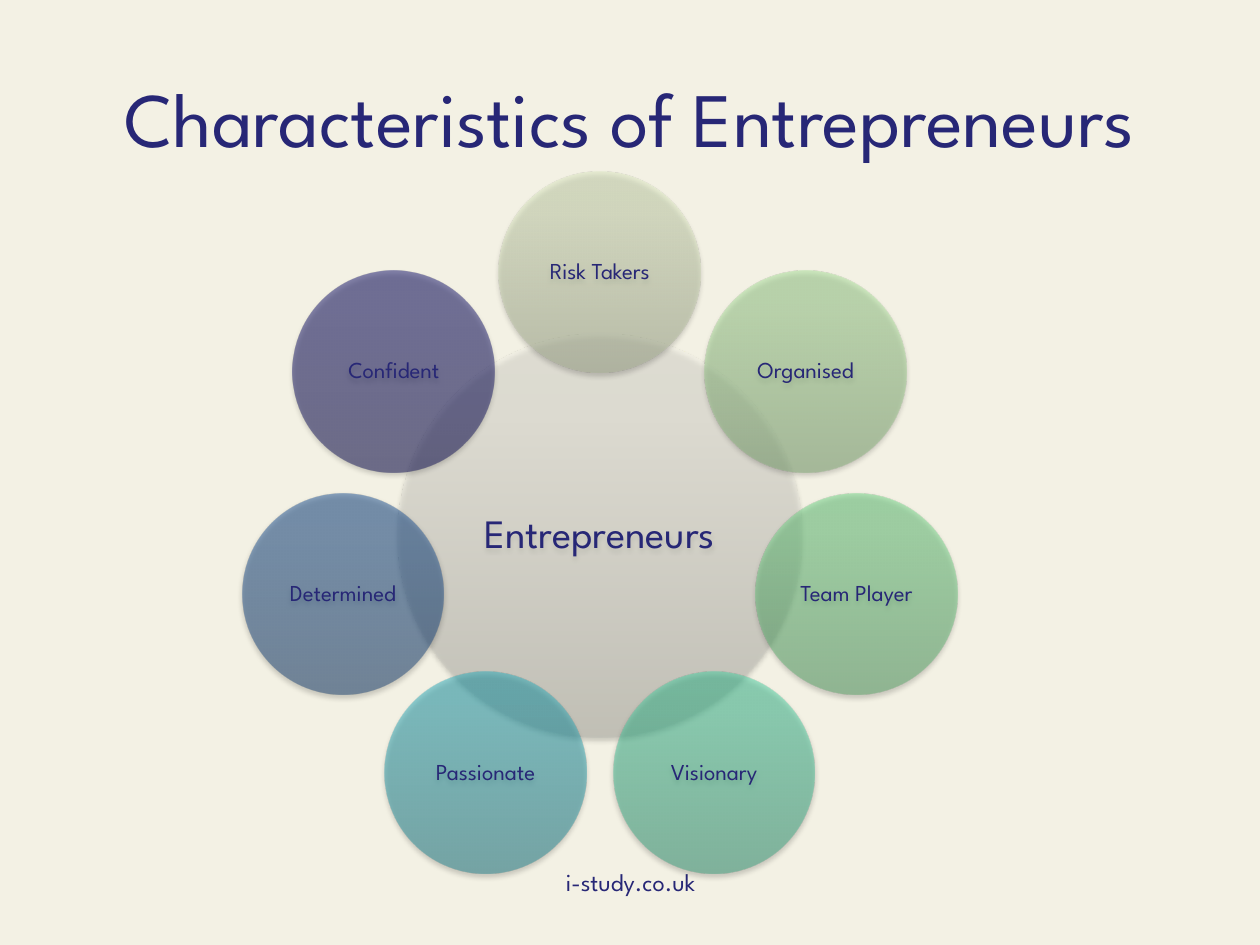
from math import cos, sin, tau

from lxml.etree import SubElement
from pptx import Presentation
from pptx.dml.color import RGBColor as RGB
from pptx.enum.shapes import MSO_SHAPE as Shape
from pptx.enum.text import MSO_ANCHOR as Anchor, PP_ALIGN as Align
from pptx.oxml import parse_xml
from pptx.oxml.ns import nsdecls, qn
from pptx.util import Pt

CREAM = RGB(0xF3, 0xF1, 0xE4)
NAVY = RGB(0x27, 0x27, 0x76)
BLACK = RGB(0x00, 0x00, 0x00)
# Gradient stops at 0, 80 and 100 percent, from bottom to top
GREY = RGB(0xBA, 0xB9, 0xB1), RGB(0xF2, 0xF0, 0xE6), RGB(0xF3, 0xF2, 0xE7)
SAGE = RGB(0xA8, 0xB1, 0x94), RGB(0xDA, 0xE6, 0xC0), RGB(0xDB, 0xE8, 0xC1)
LIME = RGB(0x82, 0xAA, 0x76), RGB(0xA8, 0xDC, 0x99), RGB(0xA8, 0xDF, 0x99)
GREEN = RGB(0x57, 0xA3, 0x68), RGB(0x71, 0xD3, 0x87), RGB(0x70, 0xD6, 0x87)
JADE = RGB(0x37, 0x9D, 0x7B), RGB(0x48, 0xCB, 0xA0), RGB(0x46, 0xCF, 0xA1)
TEAL = RGB(0x21, 0x81, 0x8D), RGB(0x2B, 0xA8, 0xB8), RGB(0x28, 0xAB, 0xBB)
BLUE = RGB(0x18, 0x3F, 0x70), RGB(0x1F, 0x52, 0x92), RGB(0x1D, 0x52, 0x95)
PLUM = RGB(0x10, 0x10, 0x52), RGB(0x15, 0x15, 0x6B), RGB(0x14, 0x14, 0x6D)

HUB_X, HUB_Y = 342.72, 306
RING = 150.5
TRAITS = [
    ("Risk Takers", SAGE), ("Organised", LIME), ("Team Player", GREEN),
    ("Visionary", JADE), ("Passionate", TEAL), ("Determined", BLUE),
    ("Confident", PLUM),
]


def write(shape, text, size, inset, anchor=Anchor.MIDDLE, spacing=1.0):
    """Put one centred line of text with the slide's font into a shape."""
    frame = shape.text_frame
    frame.text = text
    para = frame.paragraphs[0]
    sides = dict.fromkeys(("margin_left", "margin_right"), Pt(inset[0]))
    ends = dict.fromkeys(("margin_top", "margin_bottom"), Pt(inset[1]))
    formats = [
        (frame, {"word_wrap": True, "vertical_anchor": anchor, **sides, **ends}),
        (para, {"alignment": Align.CENTER, "line_spacing": spacing}),
        (para.font, {"name": "League Spartan", "size": Pt(size)}),
        (para.font.color, {"rgb": NAVY}),
    ]
    for target, values in formats:
        for name, value in values.items():
            setattr(target, name, value)


def circle(x, y, size, stops, text, points, inset):
    """Draw a half-clear, softly shadowed circle centred on x, y."""
    disc = slide.shapes.add_shape(
        Shape.OVAL, Pt(x - size / 2), Pt(y - size / 2), Pt(size), Pt(size))
    disc.line.fill.background()
    disc.shadow.inherit = False
    props = disc.element.spPr

    fill = parse_xml(f'<a:gradFill {nsdecls("a")} rotWithShape="1"><a:gsLst/>'
                     '<a:lin ang="16200000" scaled="0"/></a:gradFill>')
    for place, color in zip((0, 80, 100), stops):
        stop = SubElement(fill[0], qn("a:gs"), pos=str(place * 1000))
        tint = SubElement(stop, qn("a:srgbClr"), val=str(color))
        SubElement(tint, qn("a:alpha"), val="50000")
    props.find(qn("a:prstGeom")).addnext(fill)

    shade = SubElement(
        props.find(qn("a:effectLst")), qn("a:outerShdw"), blurRad=str(Pt(3.1)),
        dist=str(Pt(1.8)), dir="5400000", rotWithShape="0")
    tint = SubElement(shade, qn("a:srgbClr"), val=str(BLACK))
    SubElement(tint, qn("a:alpha"), val="35000")
    write(disc, text, points, (inset, inset), spacing=0.9)


deck = Presentation()
deck.slide_width, deck.slide_height = Pt(720), Pt(540)
slide = deck.slides.add_slide(deck.slide_layouts[6])
back = slide.background.fill
back.solid()
back.fore_color.rgb = CREAM

title = slide.shapes.add_textbox(Pt(36), Pt(21.6), Pt(648), Pt(90))
write(title, "Characteristics of Entrepreneurs", 44, (7.2, 3.6))
site = slide.shapes.add_textbox(Pt(246.24), Pt(491.76), Pt(228.24), Pt(37.44))
write(site, "i-study.co.uk", 14, (7.2, 3.6), Anchor.TOP)

circle(HUB_X, HUB_Y, 230.4, GREY, "Entrepreneurs", 23, 2.16)
for i, (trait, stops) in enumerate(TRAITS):
    turn = tau * i / len(TRAITS)
    circle(HUB_X + RING * sin(turn), HUB_Y - RING * cos(turn), 115.2,
           stops, trait, 13, 1.44)

deck.save("out.pptx")
